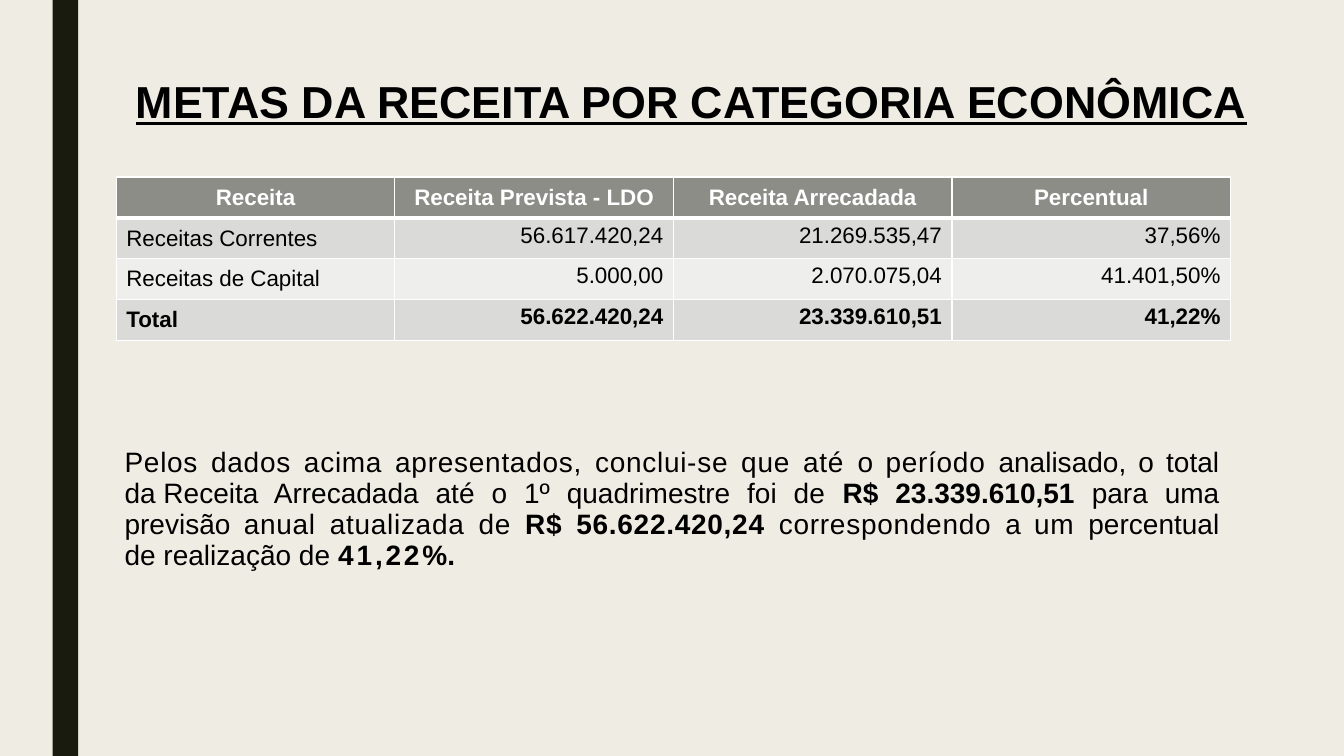
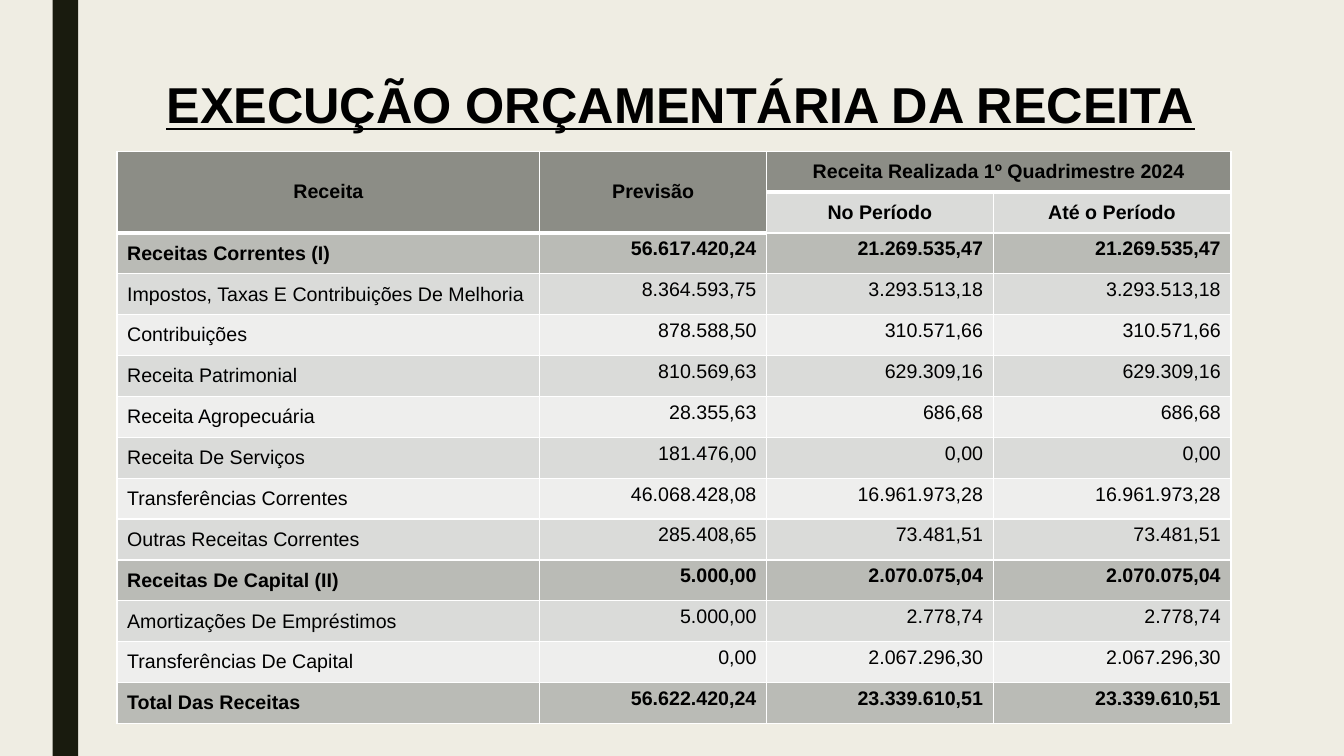
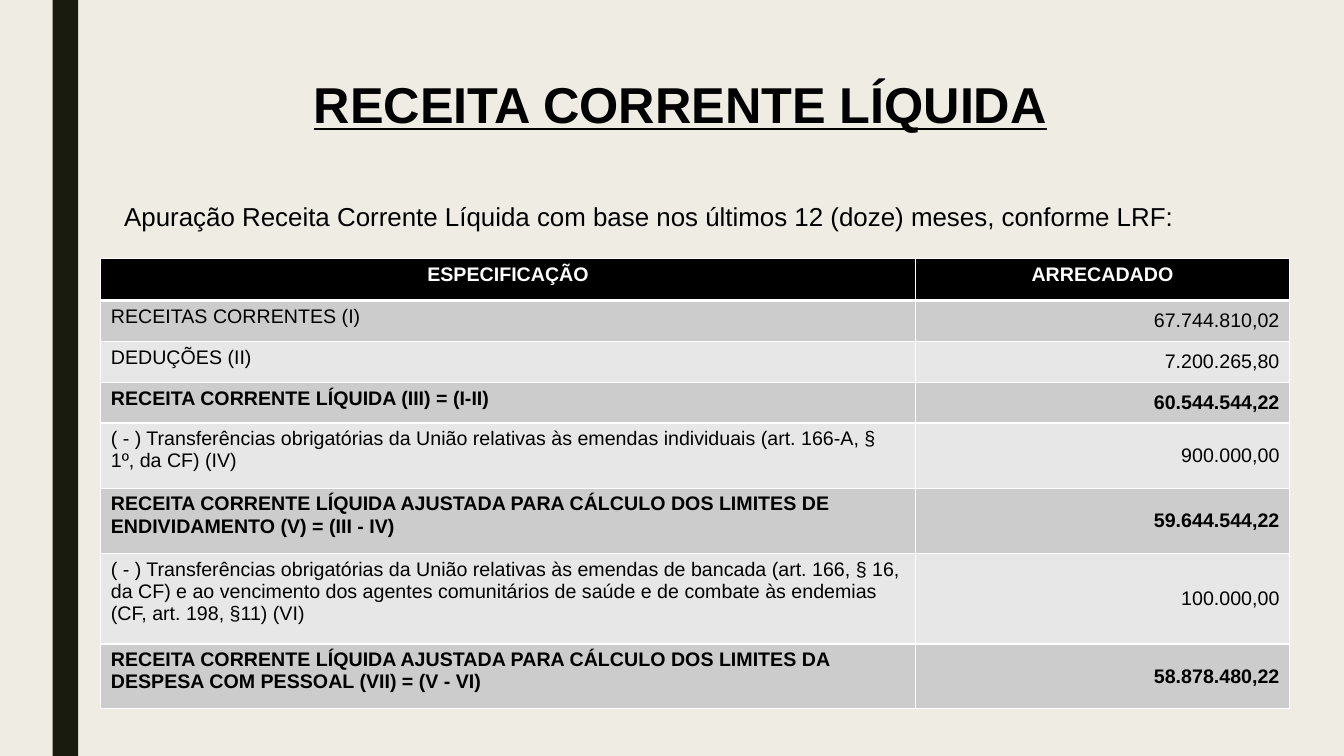
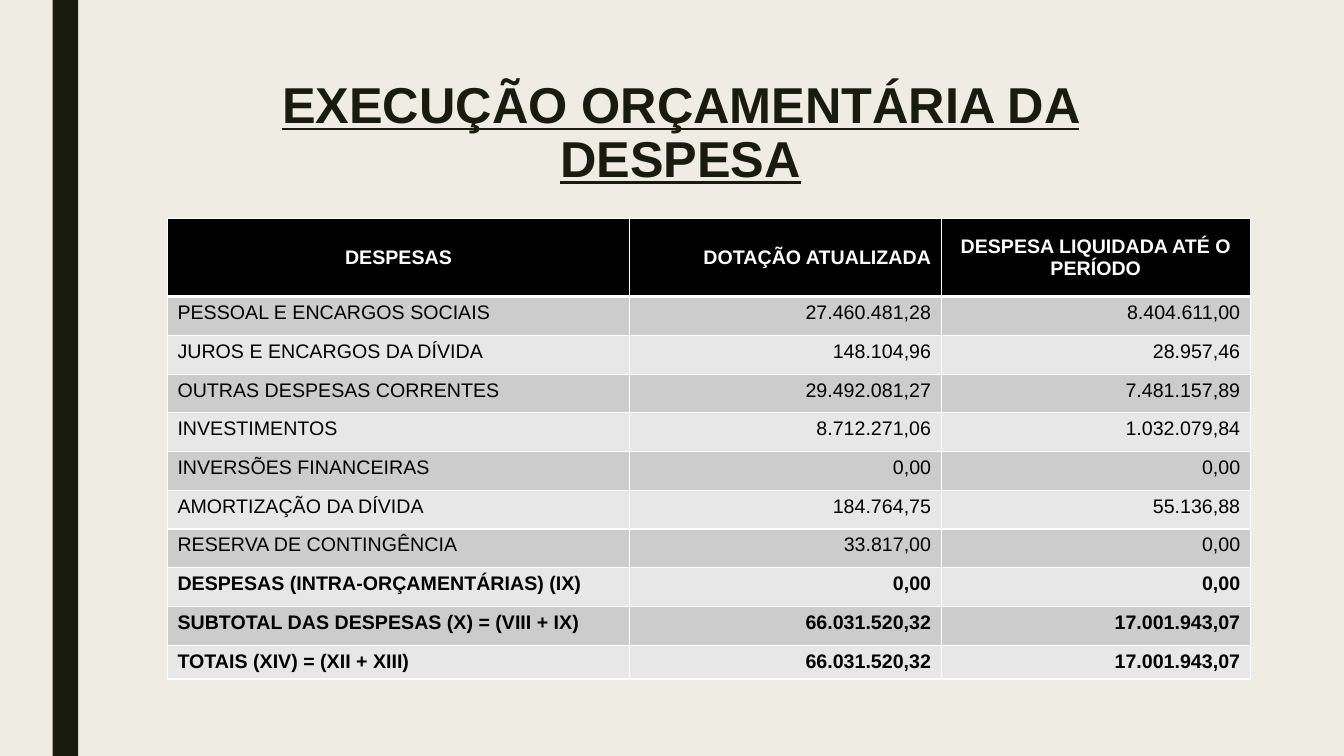
from lxml.etree import SubElement
from pptx import Presentation
from pptx.dml.color import RGBColor
from pptx.enum.shapes import MSO_SHAPE
from pptx.enum.text import MSO_ANCHOR, PP_ALIGN
from pptx.oxml.ns import qn
from pptx.util import Cm, Pt

# Colours
CREAM = RGBColor(0xEF, 0xED, 0xE3)
INK = RGBColor(0x19, 0x1B, 0x0E)
BLACK = RGBColor(0x00, 0x00, 0x00)
WHITE = RGBColor(0xFF, 0xFF, 0xFF)
OLIVE = RGBColor(0x8C, 0x8D, 0x86)
OLIVE_MID = RGBColor(0xBA, 0xBB, 0xB6)
OLIVE_LIGHT = RGBColor(0xDA, 0xDB, 0xD9)
OLIVE_PALE = RGBColor(0xEE, 0xEE, 0xED)
GREY = RGBColor(0xCC, 0xCC, 0xCC)
GREY_PALE = RGBColor(0xE7, 0xE7, 0xE7)

# Table palettes: head fill, head text, odd rows, even rows, strong rows (None keeps the band)
OLIVE_HEAD = (OLIVE, WHITE, OLIVE_LIGHT, OLIVE_PALE, None)
OLIVE_GROUPS = (OLIVE, BLACK, OLIVE_LIGHT, OLIVE_PALE, OLIVE_MID)
BLACK_HEAD = (BLACK, WHITE, GREY, GREY_PALE, None)

TOP, MIDDLE = MSO_ANCHOR.TOP, MSO_ANCHOR.MIDDLE
LEFT, CENTER, RIGHT = PP_ALIGN.LEFT, PP_ALIGN.CENTER, PP_ALIGN.RIGHT
NBSP = chr(160)  # keeps two words on one line


class Deck:
    """Holds the shared style and the current slide."""

    font = "Arial"

    def __init__(self):
        self.prs = Presentation()
        self.prs.slide_width, self.prs.slide_height = Cm(33.87), Cm(19.05)
        fill = self.prs.slide_master.background.fill
        fill.solid()
        fill.fore_color.rgb = CREAM

    def slide(self):
        self.s = self.prs.slides.add_slide(self.prs.slide_layouts[6])
        band = self.s.shapes.add_shape(
            MSO_SHAPE.RECTANGLE, Cm(1.33), 0, Cm(0.64), self.prs.slide_height)
        band.shadow.inherit = False
        band.fill.solid()
        band.fill.fore_color.rgb = INK
        band.line.fill.background()

    def run(self, p, text, color=BLACK, spacing=0, **values):
        r = p.add_run()
        r.text = text
        for name, value in {"name": self.font, **values}.items():
            setattr(r.font, name, value)
        r.font.color.rgb = color
        if spacing:
            r.font._element.set("spc", str(int(spacing * 100)))

    def text(self, box, runs, size, **paragraph):
        """Text box of one paragraph; runs are (text, values) pairs."""
        tf = self.s.shapes.add_textbox(*map(Cm, box)).text_frame
        tf.word_wrap = True
        p = tf.paragraphs[0]
        for name, value in paragraph.items():
            setattr(p, name, value)
        for text, values in runs:
            self.run(p, text, size=Pt(size), **values)

    def title(self, text, size=36, left=3.82, width=26.67, color=BLACK):
        style = {"bold": True, "underline": True, "color": color}
        self.text((left, 1.9, width, 4.11), [(text, style)], size,
                  alignment=CENTER, line_spacing=0.89)

    def borders(self, cell, first_row, thick_bottom):
        tcPr = cell._tc.get_or_add_tcPr()
        for side in "LRTB" if first_row else "LRB":
            width = Pt(3 if side == "B" and thick_bottom else 1)
            ln = SubElement(tcPr, qn(f"a:ln{side}"), w=str(width))
            fill = SubElement(ln, qn("a:solidFill"))
            SubElement(fill, qn("a:srgbClr"), val=str(WHITE))

    def table(self, left, top, cols, heights, rows, palette, strong,
              anchors, size=14, head_rows=1, head_align=None, merges=()):
        """anchors are those of the head, the label column and the values."""
        head_fill, head_color, odd, even, strong_fill = palette
        head_anchor, label_anchor, value_anchor = anchors
        tbl = self.s.shapes.add_table(
            len(rows), len(cols), Cm(left), Cm(top),
            Cm(sum(cols)), Cm(sum(heights))).table
        tbl.first_row = tbl.horz_banding = False
        for col, width in zip(tbl.columns, cols):
            col.width = Cm(width)
        for row, height in zip(tbl.rows, heights):
            row.height = Cm(height)
        for first, last in merges:
            tbl.cell(*first).merge(tbl.cell(*last))

        for i, row in enumerate(rows):
            head = i < head_rows
            fill = odd if i % 2 else even
            if i == 0:
                fill = head_fill
            elif i in strong and strong_fill:
                fill = strong_fill
            for j, text in enumerate(row):
                cell = tbl.cell(i, j)
                self.borders(cell, i == 0, i == 0 or cell.is_spanned)
                cell.fill.solid()
                cell.fill.fore_color.rgb = fill
                if cell.is_spanned:
                    continue
                p = cell.text_frame.paragraphs[0]
                if head:
                    cell.vertical_anchor = head_anchor
                    p.alignment = head_align[j] if head_align else CENTER
                else:
                    cell.vertical_anchor = value_anchor if j else label_anchor
                    p.alignment = RIGHT if j else LEFT
                self.run(p, text, head_color if i == 0 else BLACK,
                         size=Pt(size), bold=head or i in strong)


def main():
    deck = Deck()

    # Revenue targets
    deck.slide()
    deck.title("METAS DA RECEITA POR CATEGORIA ECONÔMICA", 32, 2.44, 29.97)
    deck.table(2.93, 4.46, [7.02] * 4, [1.03] * 4, [
        ("Receita", "Receita Prevista - LDO", "Receita Arrecadada", "Percentual"),
        ("Receitas Correntes", "56.617.420,24", "21.269.535,47", "37,56%"),
        ("Receitas de Capital", "5.000,00", "2.070.075,04", "41.401,50%"),
        ("Total", "56.622.420,24", "23.339.610,51", "41,22%"),
    ], OLIVE_HEAD, strong={3}, anchors=(MIDDLE, MIDDLE, TOP), size=16)
    wide, bold = {"spacing": 0.5}, {"bold": True}
    deck.text((2.89, 11.13, 28.09, 4.34), [
        ("Pelos dados acima apresentados, conclui-se que até ", wide),
        ("o ", {}),
        ("período ", wide),
        (f"analisado, o total da{NBSP}Receita Arrecadada até o 1º quadrimestre foi de ", {}),
        ("R$ 23.339.610,51 ", bold),
        ("para uma previsão ", {}),
        ("anual atualizada de ", wide),
        ("R$ 56.622.420,24 ", {**bold, **wide}),
        ("correspondendo ", wide),
        ("a ", {}),
        ("um ", wide),
        (f"percentual de{NBSP}realização de ", {}),
        ("41,22", {"bold": True, "spacing": 2}),
        ("%.", bold),
    ], 20, alignment=PP_ALIGN.JUSTIFY, line_spacing=Pt(22.3), space_before=Pt(4.7))

    # Revenue execution
    deck.slide()
    deck.title("EXECUÇÃO ORÇAMENTÁRIA DA RECEITA")
    revenue = [
        ("Receitas Correntes (I)", "56.617.420,24", "21.269.535,47"),
        ("Impostos, Taxas E Contribuições De Melhoria", "8.364.593,75", "3.293.513,18"),
        ("Contribuições", "878.588,50", "310.571,66"),
        ("Receita Patrimonial", "810.569,63", "629.309,16"),
        ("Receita Agropecuária", "28.355,63", "686,68"),
        ("Receita De Serviços", "181.476,00", "0,00"),
        ("Transferências Correntes", "46.068.428,08", "16.961.973,28"),
        ("Outras Receitas Correntes", "285.408,65", "73.481,51"),
        ("Receitas De Capital (II)", "5.000,00", "2.070.075,04"),
        ("Amortizações De Empréstimos", "5.000,00", "2.778,74"),
        ("Transferências De Capital", "0,00", "2.067.296,30"),
        ("Total Das Receitas", "56.622.420,24", "23.339.610,51"),
    ]
    # The first period of the year: both period columns hold the same value
    deck.table(2.95, 3.81, [10.65, 5.72, 5.71, 5.99], [1.03] * 14, [
        ("Receita", "Previsão", "Receita Realizada 1º Quadrimestre 2024", ""),
        ("", "", "No Período", "Até o Período"),
        *[(*row, row[-1]) for row in revenue],
    ], OLIVE_GROUPS, strong={2, 10, 13}, anchors=(MIDDLE, MIDDLE, TOP), head_rows=2,
        merges=[((0, 0), (1, 0)), ((0, 1), (1, 1)), ((0, 2), (0, 3))])

    # Net current revenue
    deck.slide()
    deck.title("RECEITA CORRENTE LÍQUIDA")
    deck.text((2.88, 4.55, 28.12, 1.47), [
        ("Apuração Receita Corrente Líquida com base nos últimos 12 (doze) meses, "
         "conforme LRF:", {}),
    ], 18.5, line_spacing=1.5)
    deck.table(2.54, 6.52, [20.53, 9.43], [1.05] + [1.03] * 3 + [1.64, 1.64, 2.29, 1.63], [
        ("ESPECIFICAÇÃO", "ARRECADADO"),
        ("RECEITAS CORRENTES (I)", "67.744.810,02"),
        ("DEDUÇÕES (II)", "7.200.265,80"),
        ("RECEITA CORRENTE LÍQUIDA (III) = (I-II)", "60.544.544,22"),
        ("( - ) Transferências obrigatórias da União relativas às emendas individuais "
         "(art. 166-A, § 1º, da CF) (IV)", "900.000,00"),
        ("RECEITA CORRENTE LÍQUIDA AJUSTADA PARA CÁLCULO DOS LIMITES DE "
         "ENDIVIDAMENTO (V) = (III - IV)", "59.644.544,22"),
        ("( - ) Transferências obrigatórias da União relativas às emendas de bancada "
         "(art. 166, § 16, da CF) e ao vencimento dos agentes comunitários de saúde e "
         "de combate às endemias (CF, art. 198, §11) (VI)", "100.000,00"),
        ("RECEITA CORRENTE LÍQUIDA AJUSTADA PARA CÁLCULO DOS LIMITES DA "
         "DESPESA COM PESSOAL (VII) = (V - VI)", "58.878.480,22"),
    ], BLACK_HEAD, strong={3, 5, 7}, anchors=(TOP, TOP, MIDDLE))

    # Expenditure execution
    deck.slide()
    deck.title("EXECUÇÃO ORÇAMENTÁRIA DA DESPESA", color=INK)
    deck.table(4.22, 5.51, [11.65, 7.85, 7.79], [1.96] + [0.98, 0.98, 0.97] * 3 + [0.77], [
        ("DESPESAS", "DOTAÇÃO ATUALIZADA", "DESPESA LIQUIDADA ATÉ O PERÍODO"),
        ("PESSOAL E ENCARGOS SOCIAIS", "27.460.481,28", "8.404.611,00"),
        ("JUROS E ENCARGOS DA DÍVIDA", "148.104,96", "28.957,46"),
        ("OUTRAS DESPESAS CORRENTES", "29.492.081,27", "7.481.157,89"),
        ("INVESTIMENTOS", "8.712.271,06", "1.032.079,84"),
        ("INVERSÕES FINANCEIRAS", "0,00", "0,00"),
        ("AMORTIZAÇÃO DA DÍVIDA", "184.764,75", "55.136,88"),
        ("RESERVA DE CONTINGÊNCIA", "33.817,00", "0,00"),
        ("DESPESAS (INTRA-ORÇAMENTÁRIAS) (IX)", "0,00", "0,00"),
        ("SUBTOTAL DAS DESPESAS (X) = (VIII + IX)", "66.031.520,32", "17.001.943,07"),
        ("TOTAIS (XIV) = (XII + XIII)", "66.031.520,32", "17.001.943,07"),
    ], BLACK_HEAD, strong={8, 9, 10}, anchors=(MIDDLE, TOP, TOP),
        head_align=(CENTER, RIGHT, CENTER))

    deck.prs.save("out.pptx")


if __name__ == "__main__":
    main()
